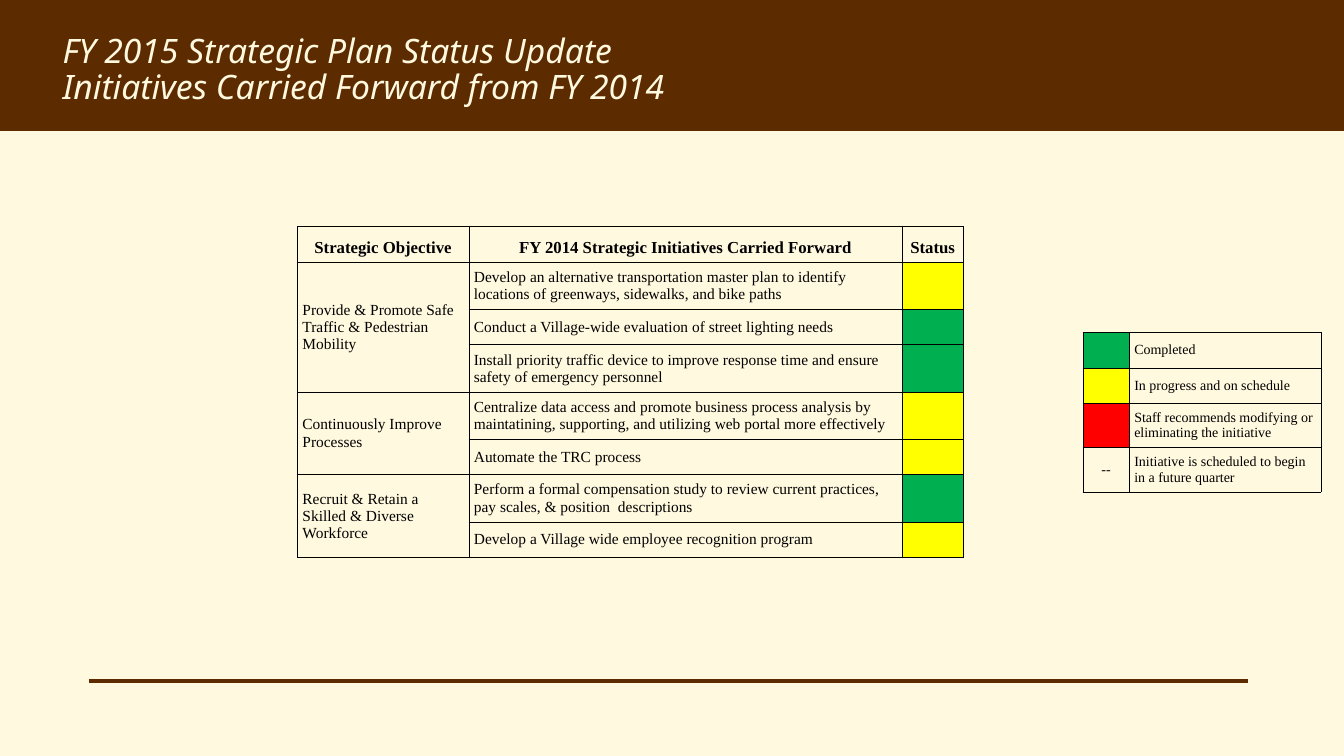
"""Build the FY 2015 strategic plan status slide with its status table and legend."""
from lxml import etree
from pptx import Presentation
from pptx.dml.color import RGBColor
from pptx.enum import shapes, text
from pptx.oxml import ns
from pptx.util import Inches, Pt

BROWN = RGBColor(0x5D, 0x2B, 0x00)
CREAM = RGBColor(0xFF, 0xF9, 0xDF)
BLACK = RGBColor(0x00, 0x00, 0x00)
GREEN = RGBColor(0x00, 0xB0, 0x50)
YELLOW = RGBColor(0xFF, 0xFF, 0x00)
RED = RGBColor(0xFF, 0x00, 0x00)


def format_cell(cell, wording, size, fill=None, centred=False, bold=False):
    cell.margin_left = cell.margin_right = Inches(0.05)
    cell.margin_top = cell.margin_bottom = Inches(0.05)
    cell.vertical_anchor = text.MSO_ANCHOR.BOTTOM if bold else text.MSO_ANCHOR.MIDDLE
    borders = cell._tc.get_or_add_tcPr()
    for side in ("a:lnL", "a:lnR", "a:lnT", "a:lnB"):
        border = etree.SubElement(borders, ns.qn(side), w=str(Pt(0.5)))
        solid = etree.SubElement(border, ns.qn("a:solidFill"))
        etree.SubElement(solid, ns.qn("a:srgbClr"), val=str(BLACK))
    if fill is None:
        cell.fill.background()
    else:
        cell.fill.solid()
        cell.fill.fore_color.rgb = fill
    cell.text_frame.text = wording
    paragraph = cell.text_frame.paragraphs[0]
    paragraph.alignment = text.PP_ALIGN.CENTER if centred else text.PP_ALIGN.LEFT
    paragraph.font.size = Pt(size)
    for run in paragraph.runs:
        run.font.name = "Times New Roman"
        run.font.size = Pt(size)
        run.font.bold = bold
        run.font.color.rgb = BLACK


def add_grid(left, top, widths, heights):
    frame = slide.shapes.add_table(len(heights), len(widths), Inches(left), Inches(top),
                                   Inches(sum(widths)), Inches(sum(heights)))
    grid = frame.table
    grid.first_row = grid.horz_banding = False
    for column, width in zip(grid.columns, widths):
        column.width = Inches(width)
    for row, height in zip(grid.rows, heights):
        row.height = Inches(height)
    return grid


deck = Presentation()
deck.slide_width, deck.slide_height = Inches(13.33), Inches(7.5)
slide = deck.slides.add_slide(deck.slide_layouts[5])
slide.background.fill.solid()
slide.background.fill.fore_color.rgb = CREAM

title = slide.shapes.title
title.left, title.top, title.width, title.height = (
    Inches(0.52), Inches(0.25), Inches(12.29), Inches(0.91))
title.text_frame.text = ("FY 2015 Strategic Plan Status Update\n"
                         "Initiatives Carried Forward from FY 2014")
title.text_frame.auto_size = text.MSO_AUTO_SIZE.NONE
title.text_frame.vertical_anchor = text.MSO_ANCHOR.MIDDLE
for line in title.text_frame.paragraphs:
    line.alignment = text.PP_ALIGN.LEFT
    line.line_spacing = 0.88
    for run in line.runs:
        run.font.name = "Noto Sans"
        run.font.size = Pt(24)
        run.font.italic = True
        run.font.color.rgb = CREAM

header_band = slide.shapes.add_shape(shapes.MSO_SHAPE.RECTANGLE, 0, 0,
                                     deck.slide_width, Inches(1.3))
header_band.shadow.inherit = False
header_band.fill.solid()
header_band.fill.fore_color.rgb = BROWN
header_band.line.fill.background()
title.element.addprevious(header_band.element)

footer_rule = slide.shapes.add_connector(shapes.MSO_CONNECTOR.STRAIGHT, Inches(0.88),
                                         Inches(6.76), Inches(12.38), Inches(6.76))
footer_rule.line.color.rgb = BROWN
footer_rule.line.width = Pt(3)
etree.SubElement(footer_rule.element.spPr, ns.qn("a:effectLst"))

statuses = [
    (GREEN, "", "Completed", 0.35),
    (YELLOW, "", "In progress and on schedule", 0.35),
    (RED, "", "Staff recommends modifying or eliminating the initiative", 0.44),
    (None, "--", "Initiative is scheduled to begin in a future quarter", 0.44),
]
legend = add_grid(10.74, 3.3, [0.46, 1.9], [status[3] for status in statuses])
for row, (colour, mark, meaning, height) in enumerate(statuses):
    format_cell(legend.cell(row, 0), mark, 10, colour, centred=True)
    format_cell(legend.cell(row, 1), meaning, 10)

objectives = [
    ("Provide & Promote Safe Traffic & Pedestrian Mobility", [
        ("Develop an alternative transportation master plan to identify locations of "
         "greenways, sidewalks, and bike paths", YELLOW, 0.47),
        ("Conduct a Village-wide evaluation of street lighting needs", GREEN, 0.35),
        ("Install priority traffic device to improve response time and ensure safety of "
         "emergency personnel", GREEN, 0.47),
    ]),
    ("Continuously Improve Processes", [
        ("Centralize data access and promote business process analysis by maintatining, "
         "supporting, and utilizing web portal more effectively", YELLOW, 0.47),
        ("Automate the TRC process", YELLOW, 0.35),
    ]),
    ("Recruit & Retain a Skilled & Diverse Workforce", [
        ("Perform a formal compensation study to review current practices, pay scales, "
         "& position  descriptions", GREEN, 0.47),
        ("Develop a Village wide employee recognition program", YELLOW, 0.35),
    ]),
]
heights = [0.35] + [item[2] for _, initiatives in objectives for item in initiatives]
plan = add_grid(2.95, 2.25, [1.7, 4.3, 0.6], heights)
headings = ["Strategic Objective", "FY 2014 Strategic Initiatives Carried Forward", "Status"]
for column, heading in enumerate(headings):
    format_cell(plan.cell(0, column), heading, 12, centred=True, bold=True)
row = 1
for objective, initiatives in objectives:
    first = row
    for initiative, colour, height in initiatives:
        format_cell(plan.cell(row, 0), objective if row == first else "", 11)
        format_cell(plan.cell(row, 1), initiative, 11)
        format_cell(plan.cell(row, 2), "", 11, colour)
        row += 1
    plan.cell(first, 0).merge(plan.cell(row - 1, 0))

deck.save("out.pptx")
